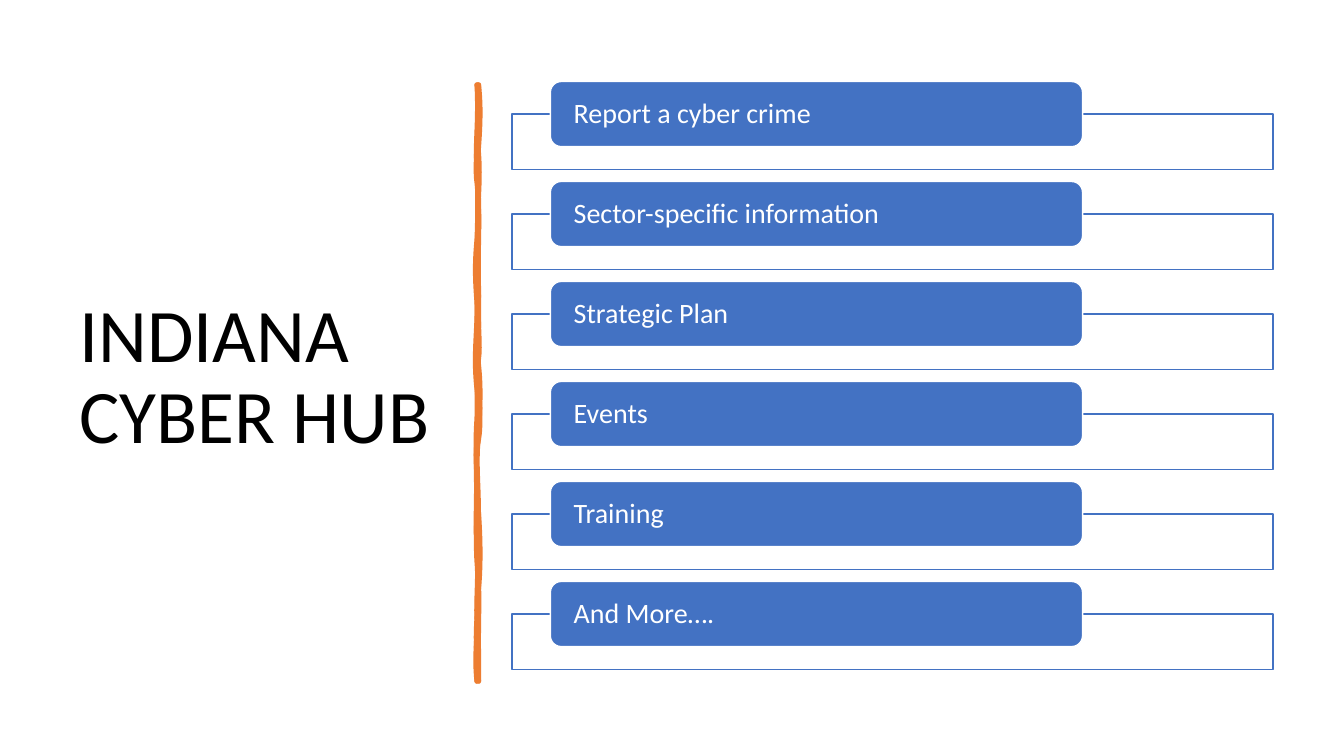
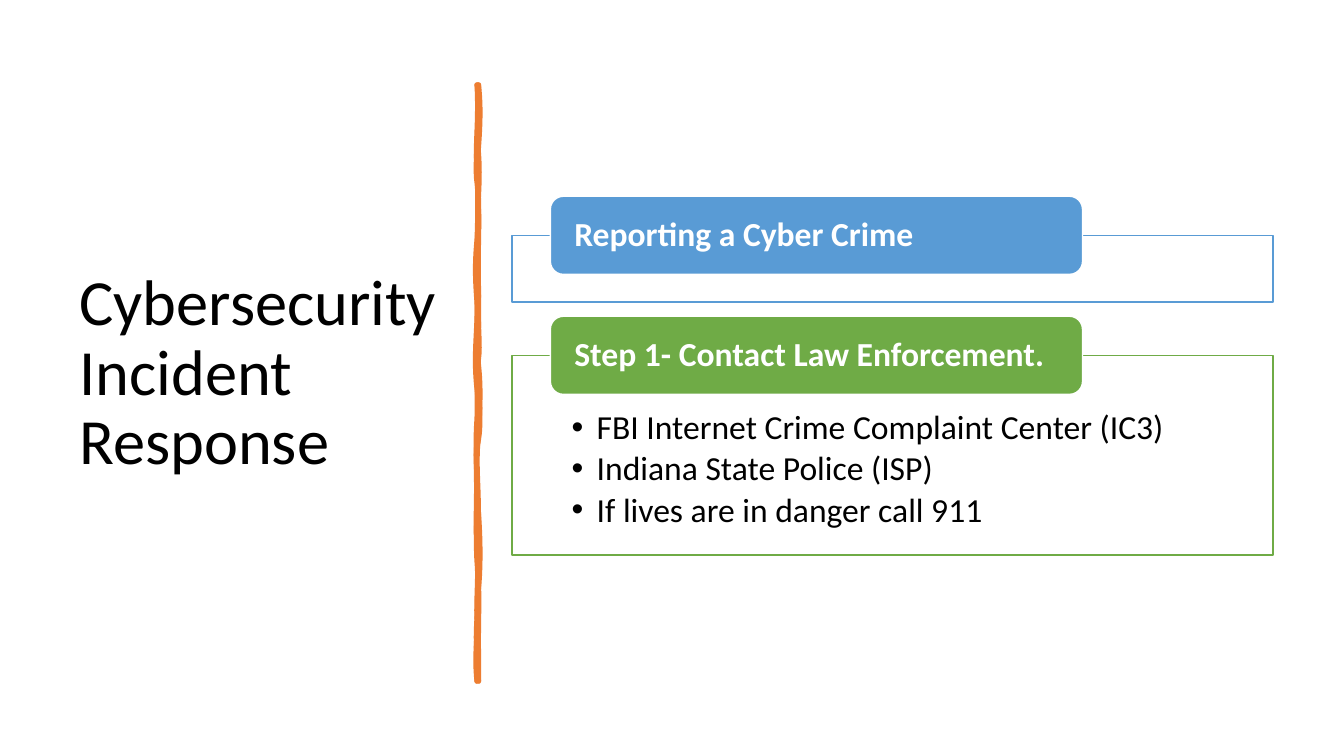
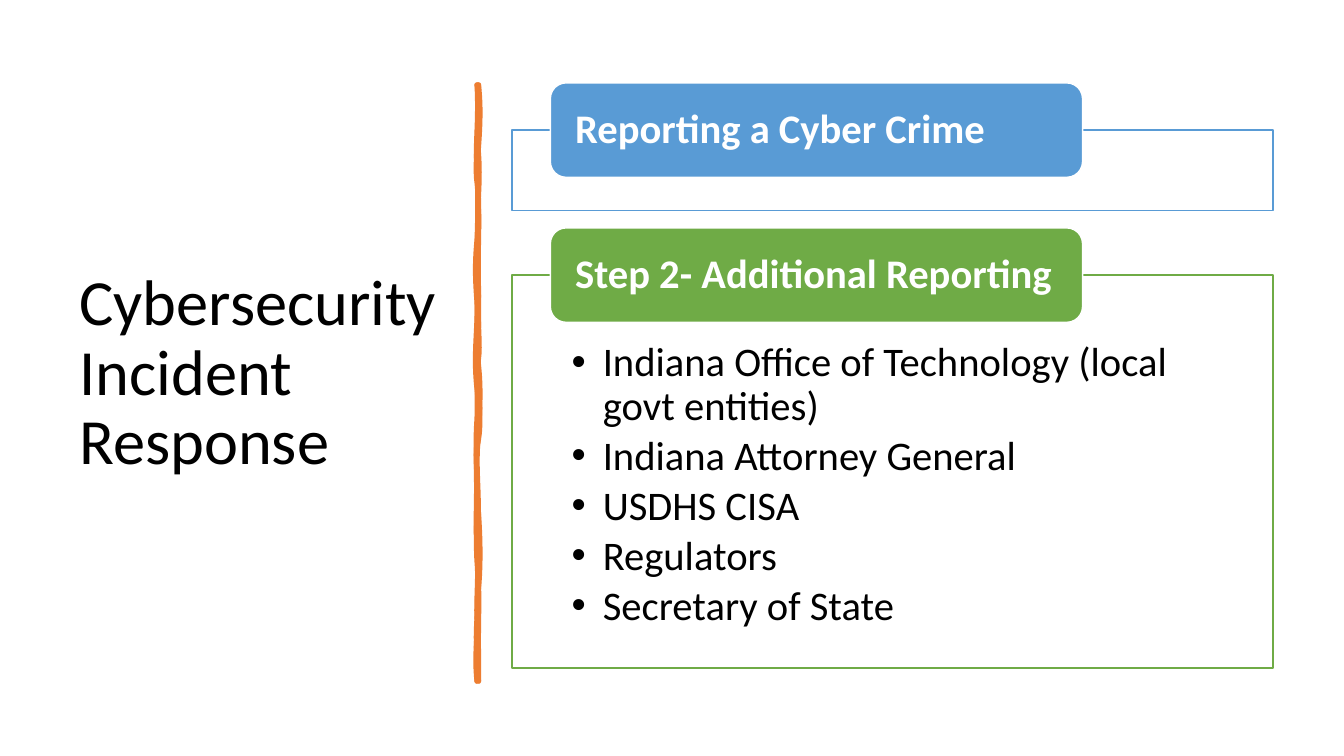
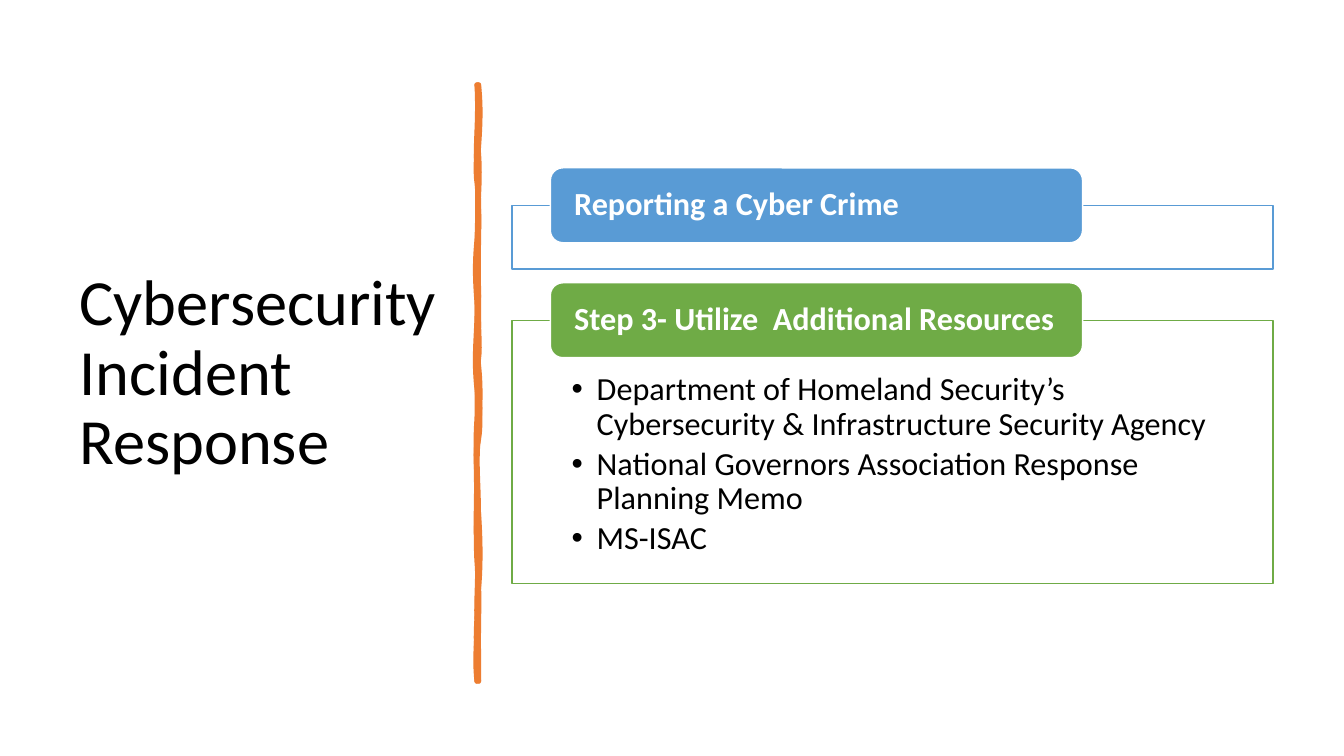
from lxml import etree
from pptx import Presentation
from pptx import util as u
from pptx.dml.color import RGBColor
from pptx.enum import shapes, text
from pptx.oxml import ns

PX = 9144
FONT = "Calibri"
BLACK = RGBColor(0x00, 0x00, 0x00)
WHITE = RGBColor(0xFF, 0xFF, 0xFF)
NAVY = RGBColor(0x43, 0x72, 0xC3)
BLUE = RGBColor(0x59, 0x9B, 0xD5)
GREEN = RGBColor(0x6F, 0xAB, 0x46)
ORANGE = RGBColor(0xED, 0x7D, 0x31)

BOX_LEFT, BOX_WIDTH = 508, 755
TAB_LEFT, TAB_WIDTH = 546, 528
STACK_MIDDLE = 372.6
TAB_PER_POINT = 3.23
BOX_PER_POINT = 2.76
GAP_PER_POINT = 2.2

BRUSH_STROKES = [
    [(475, 84), (477, 102), (477, 119), (475, 146), (473, 173), (476, 195), (475, 226),
     (474, 257), (475, 262), (475, 294), (474, 325), (477, 342), (475, 356),
     (473, 370), (479, 414), (475, 436), (471, 457), (472, 484), (475, 510),
     (477, 536), (477, 564), (475, 584), (473, 603), (476, 650), (475, 676),
     (474, 676), (473, 676), (473, 676), (474, 646), (471, 644), (473, 613),
     (474, 583), (474, 570), (473, 557), (472, 544), (472, 495), (473, 477),
     (473, 459), (471, 445), (473, 415), (474, 386), (472, 373), (473, 335),
     (474, 298), (472, 281), (473, 250), (474, 218), (475, 200), (473, 181),
     (470, 163), (477, 104), (473, 84), (474, 84), (474, 84), (475, 84)],
    [(475, 84), (475, 115), (472, 125), (475, 152), (477, 179), (474, 197), (475, 208),
     (476, 220), (474, 255), (475, 294), (476, 333), (473, 343), (475, 362),
     (477, 381), (477, 397), (475, 430), (472, 463), (475, 474), (475, 516),
     (475, 557), (474, 553), (475, 578), (476, 603), (474, 647), (475, 676),
     (474, 675), (473, 675), (473, 676), (470, 649), (474, 632), (473, 613),
     (472, 595), (475, 569), (473, 539), (471, 510), (476, 500), (473, 471),
     (470, 442), (477, 420), (473, 386), (469, 351), (474, 325), (473, 300),
     (471, 275), (471, 259), (473, 238), (474, 216), (474, 185), (473, 164),
     (471, 143), (475, 121), (473, 84), (474, 84), (474, 84), (475, 84)],
]


def px(value):
    return u.Emu(round(value * PX))


def paint(shape, fill, line, width):
    shape.shadow.inherit = False
    shape.fill.solid()
    shape.fill.fore_color.rgb = fill
    shape.line.color.rgb = line
    shape.line.width = u.Pt(width)


def set_margins(text_frame, left, top, right, bottom):
    text_frame.word_wrap = True
    text_frame.margin_left, text_frame.margin_top = px(left), px(top)
    text_frame.margin_right, text_frame.margin_bottom = px(right), px(bottom)


def format_paragraph(paragraph, size, color, bold=False):
    paragraph.alignment = text.PP_ALIGN.LEFT
    paragraph.line_spacing = 0.9
    for run in paragraph.runs:
        run.font.name = FONT
        run.font.size = u.Pt(size)
        run.font.bold = bold
        run.font.color.rgb = color


def add_bullet(paragraph, indent):
    properties = paragraph._p.get_or_add_pPr()
    properties.set("marL", str(px(indent)))
    properties.set("indent", str(-px(indent)))
    etree.SubElement(properties, ns.qn("a:buFont")).set("typeface", "Arial")
    etree.SubElement(properties, ns.qn("a:buChar")).set("char", "•")


def add_title(slide, title, size, top):
    shape = slide.shapes.add_textbox(px(69), px(top), px(374), px(611))
    text_frame = shape.text_frame
    set_margins(text_frame, 10, 5, 10, 5)
    text_frame.vertical_anchor = text.MSO_ANCHOR.MIDDLE
    text_frame.text = title
    format_paragraph(text_frame.paragraphs[0], size, BLACK)


def bend_segments(shape):
    segments = list(shape._element.iter(ns.qn("a:lnTo")))
    for i in range(0, len(segments), 3):
        curve = etree.Element(ns.qn("a:cubicBezTo"))
        segments[i].addprevious(curve)
        for segment in segments[i:i + 3]:
            curve.append(segment[0])
            segment.getparent().remove(segment)


def add_brush_line(slide):
    first, second = BRUSH_STROKES
    builder = slide.shapes.build_freeform(*first[0], scale=PX)
    builder.add_line_segments(first[1:], close=True)
    builder.move_to(*second[0])
    builder.add_line_segments(second[1:], close=True)
    shape = builder.convert_to_shape()
    bend_segments(shape)
    paint(shape, ORANGE, ORANGE, 3.25)
    line = shape._element.spPr.find(ns.qn("a:ln"))
    etree.SubElement(line, ns.qn("a:round"))


def add_box(slide, top, height, color, size, bullets):
    shape = slide.shapes.add_shape(shapes.MSO_SHAPE.RECTANGLE, px(BOX_LEFT), px(top),
                                   px(BOX_WIDTH), px(height))
    paint(shape, WHITE, color, 1)
    if not bullets:
        return
    text_frame = shape.text_frame
    set_margins(text_frame, 59, 2.28 * size, 59, 0.78 * size)
    text_frame.vertical_anchor = text.MSO_ANCHOR.TOP
    text_frame.text = "\n".join(bullets)
    for i, paragraph in enumerate(text_frame.paragraphs):
        format_paragraph(paragraph, size, BLACK)
        paragraph.space_before = u.Pt(round(0.15 * size, 1) if i else 0)
        add_bullet(paragraph, max(25, round(1.06 * size)))


def add_tab(slide, top, height, color, size, label, bold):
    shape = slide.shapes.add_shape(shapes.MSO_SHAPE.ROUNDED_RECTANGLE, px(TAB_LEFT),
                                   px(top), px(TAB_WIDTH), px(height))
    paint(shape, color, WHITE, 1)
    text_frame = shape.text_frame
    set_margins(text_frame, 20, 0, 20, 0)
    text_frame.vertical_anchor = text.MSO_ANCHOR.MIDDLE
    text_frame.text = label
    format_paragraph(text_frame.paragraphs[0], size, WHITE, bold)


def add_stack(slide, items, size, bold=False, list_height=0):
    tab_height, gap = TAB_PER_POINT * size, GAP_PER_POINT * size
    heights = [list_height if bullets else BOX_PER_POINT * size for _, _, bullets in items]
    total = tab_height / 2 + sum(heights) + gap * (len(items) - 1)
    top = STACK_MIDDLE - total / 2 + tab_height / 2
    for (label, color, bullets), height in zip(items, heights):
        add_box(slide, top, height, color, size, bullets)
        add_tab(slide, top - tab_height / 2, tab_height, color, size, label, bold)
        top += height + gap


def add_content_slide(presentation, title, title_size, title_top):
    slide = presentation.slides.add_slide(presentation.slide_layouts[6])
    add_title(slide, title, title_size, title_top)
    add_brush_line(slide)
    return slide


def add_step_slide(presentation, step, bullets, size, list_height):
    slide = add_content_slide(presentation, "Cybersecurity Incident Response", 46, 66)
    items = [("Reporting a Cyber Crime", BLUE, []), (step, GREEN, bullets)]
    add_stack(slide, items, size, bold=True, list_height=list_height)


def main():
    presentation = Presentation()
    presentation.slide_width, presentation.slide_height = px(4000 / 3), px(750)

    hub = add_content_slide(presentation, "INDIANA CYBER HUB", 54, 70)
    topics = ["Report a cyber crime", "Sector-specific information", "Strategic Plan",
              "Events", "Training", "And More…."]
    add_stack(hub, [(topic, NAVY, []) for topic in topics], 20)

    add_step_slide(presentation, "Step 1- Contact Law Enforcement.",
                   ["FBI Internet Crime Complaint Center (IC3)",
                    "Indiana State Police (ISP)",
                    "If lives are in danger call 911"], 24, 198)
    add_step_slide(presentation, "Step 2- Additional Reporting",
                   ["Indiana Office of Technology (local govt entities)",
                    "Indiana Attorney General",
                    "USDHS CISA",
                    "Regulators",
                    "Secretary of State"], 29, 390)
    add_step_slide(presentation, "Step 3- Utilize  Additional Resources",
                   ["Department of Homeland Security’s Cybersecurity & "
                    "Infrastructure Security Agency",
                    "National Governors Association Response Planning Memo",
                    "MS-ISAC"], 23, 261)
    presentation.save("out.pptx")


if __name__ == "__main__":
    main()
